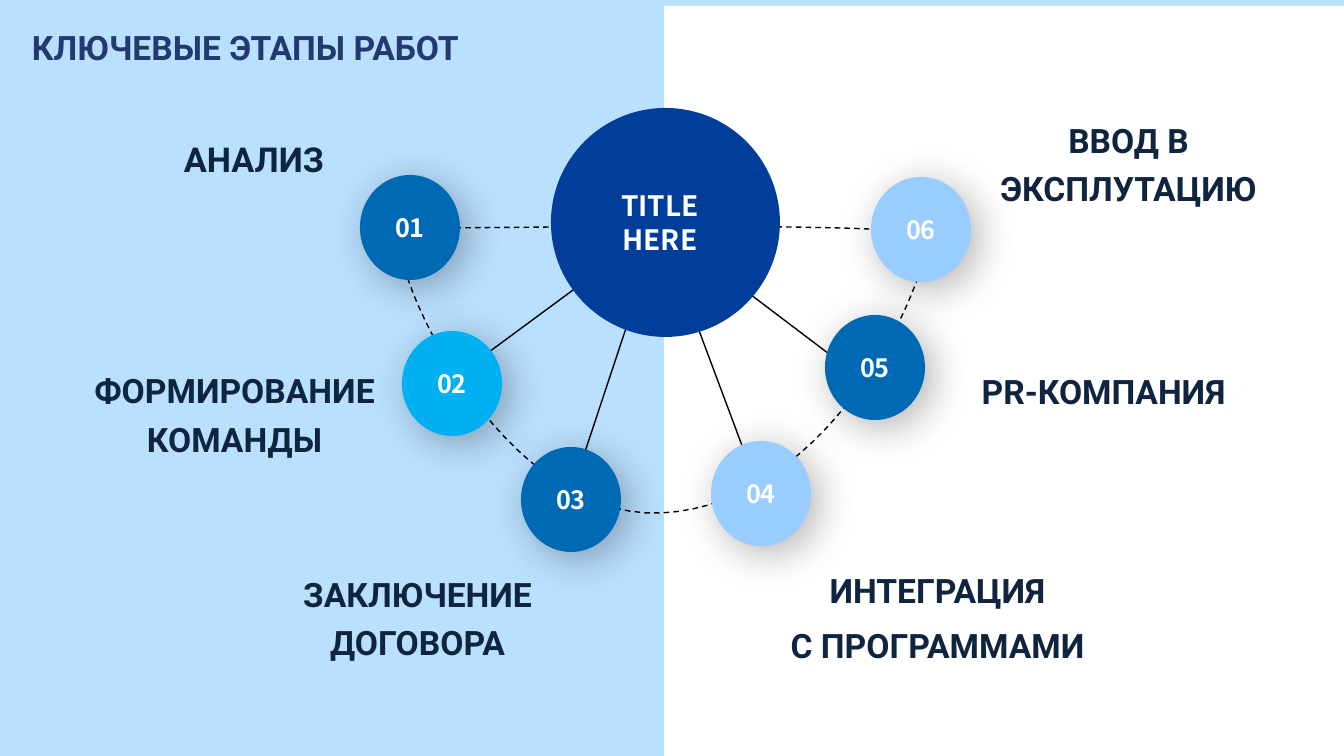
"""Builds a slide of six numbered project stages around a central hub."""
from lxml.etree import SubElement
from pptx import Presentation
from pptx.dml.color import RGBColor
from pptx.enum.dml import MSO_LINE
from pptx.enum.shapes import MSO_CONNECTOR, MSO_SHAPE
from pptx.enum.text import MSO_ANCHOR, MSO_AUTO_SIZE, PP_ALIGN
from pptx.oxml.ns import qn
from pptx.util import Emu, Pt

SCALE = 12192000 / 1344
WHITE = RGBColor(0xFF, 0xFF, 0xFF)
BLACK = RGBColor(0, 0, 0)
PALE = RGBColor(0xBA, 0xE0, 0xFF)
GREY = RGBColor(0xD9, 0xD9, 0xD9)
INDIGO = RGBColor(0x24, 0x39, 0x70)
NAVY = RGBColor(0x0F, 0x24, 0x3E)
ROYAL = RGBColor(0x00, 0x3E, 0x99)
BLUE = RGBColor(0x00, 0x69, 0xB4)
CYAN = RGBColor(0x00, 0xB0, 0xF0)
SKY = RGBColor(0x99, 0xCC, 0xFF)
SANS = "Noto Sans CJK SC"


def px(*nums):
    """Turn pixels into EMU."""
    return [Emu(round(num * SCALE)) for num in nums]


def write(shape, lines, size, name, color, inset=(10, 5), anchor=MSO_ANCHOR.MIDDLE, **rules):
    """Fill a shape with bold lines of text."""
    frame = shape.text_frame
    side, top = px(*inset)
    form = {"word_wrap": True, "auto_size": MSO_AUTO_SIZE.NONE, "vertical_anchor": anchor,
            "margin_left": side, "margin_right": side, "margin_top": top, "margin_bottom": top}
    for key, value in form.items():
        setattr(frame, key, value)
    frame.text = "\n".join(lines)
    for para in frame.paragraphs:
        for key, value in ({"alignment": PP_ALIGN.CENTER} | rules).items():
            setattr(para, key, value)
        font = para.runs[0].font
        for key, value in {"size": Pt(size), "name": name, "bold": True}.items():
            setattr(font, key, value)
        font.color.rgb = color


deck = Presentation()
deck.slide_width, deck.slide_height = px(1344, 756)
slide = deck.slides.add_slide(deck.slide_layouts[5])
slide.background.fill.solid()
slide.background.fill.fore_color.rgb = PALE
shapes = slide.shapes

panel = shapes.add_shape(MSO_SHAPE.RECTANGLE, *px(664, 6, 680, 750))
panel.shadow.inherit = False
panel.fill.solid()
panel.fill.fore_color.rgb = WHITE
panel.line.fill.background()

title = shapes.title
title.left, title.top, title.width, title.height = px(22, 15, 1164, 65)
write(title, ["КЛЮЧЕВЫЕ ЭТАПЫ РАБОТ"], 24, "Roboto", INDIGO, alignment=PP_ALIGN.LEFT)
panel._element.addnext(title._element)

arcs = [
    ((407, 228), (446, 229), (872, 221), (926, 234)),
    ((926, 234), (934, 270), (836, 505), (661, 513)),
    ((661, 513), (488, 521), (368, 226), (407, 228)),
]
STEPS = 32
dots = []
for arc in arcs:
    for step in range(STEPS):
        t = step / STEPS
        parts = ((1 - t) ** 3, 3 * t * (1 - t) ** 2, 3 * t * t * (1 - t), t ** 3)
        dots.append(tuple(px(*(sum(w * p[axis] for w, p in zip(parts, arc)) for axis in (0, 1)))))
build = shapes.build_freeform(*dots[0], scale=1.0)
build.add_line_segments(dots[1:], close=True)
orbit = build.convert_to_shape()
orbit.shadow.inherit = False
orbit.fill.background()
orbit.line.color.rgb = BLACK
orbit.line.width = Pt(1)
orbit.line.dash_style = MSO_LINE.DASH

hub = (660, 226)
lines = [((442, 519), (130, 519), GREY, 0.75, MSO_LINE.ROUND_DOT)]
lines += [(end, hub, BLACK, 1, None) for end in ((432, 394), (566, 509), (762, 499), (882, 394))]
for start, end, color, width, dash in lines:
    line = shapes.add_connector(MSO_CONNECTOR.STRAIGHT, *px(*start, *end))
    line.line.color.rgb = color
    line.line.width = Pt(width)
    line.line.dash_style = dash
    SubElement(line._element.spPr, qn("a:effectLst"))

discs = [
    ("02", 402, 331, 100, 105, CYAN),
    ("03", 521, 447, 100, 105, BLUE),
    ("04", 711, 441, 100, 105, SKY),
    ("05", 825, 315, 100, 105, BLUE),
    ("06", 871, 177, 100, 105, SKY),
    ("01", 360, 175, 100, 105, BLUE),
    ("", 551, 108, 229, 229, ROYAL),
]
for mark, left, top, width, height, color in discs:
    disc = shapes.add_shape(MSO_SHAPE.OVAL, *px(left, top, width, height))
    disc.shadow.inherit = False
    disc.fill.solid()
    disc.fill.fore_color.rgb = color
    disc.line.fill.background()
    if mark:
        write(disc, [mark], 18, SANS, WHITE)
        effect = disc._element.spPr.find(qn("a:effectLst"))
        shade = SubElement(effect, qn("a:outerShdw"), blurRad=str(Pt(30)), dist=str(Pt(8)),
                           dir="2700000", algn="tl", rotWithShape="0")
        tint = SubElement(shade, qn("a:srgbClr"), val=str(BLACK))
        SubElement(tint, qn("a:alpha"), val="30000")

core = shapes.add_textbox(*px(607, 166, 106, 113))
write(core, ["TITLE", "HERE"], 20, SANS, WHITE, (0, 0))

labels = [
    (["АНАЛИЗ"], 156, 130, 196, 50, 24.5),
    (["ФОРМИРОВАНИЕ КОМАНДЫ"], 72, 362, 325, 95, 24),
    (["ЗАКЛЮЧЕНИЕ ДОГОВОРА"], 255, 566, 325, 95, 24),
    (["ИНТЕГРАЦИЯ", "С ПРОГРАММАМИ"], 747, 562, 381, 95, 24),
    (["PR-КОМПАНИЯ"], 941, 363, 325, 95, 24),
    (["ВВОД В ЭКСПЛУТАЦИЮ"], 966, 112, 325, 95, 24),
]
for words, left, top, width, height, size in labels:
    label = shapes.add_textbox(*px(left, top, width, height))
    write(label, words, size, "Roboto", NAVY, (13, 0), MSO_ANCHOR.TOP,
          line_spacing=1.2, space_after=Pt(4.5))

deck.save("out.pptx")
